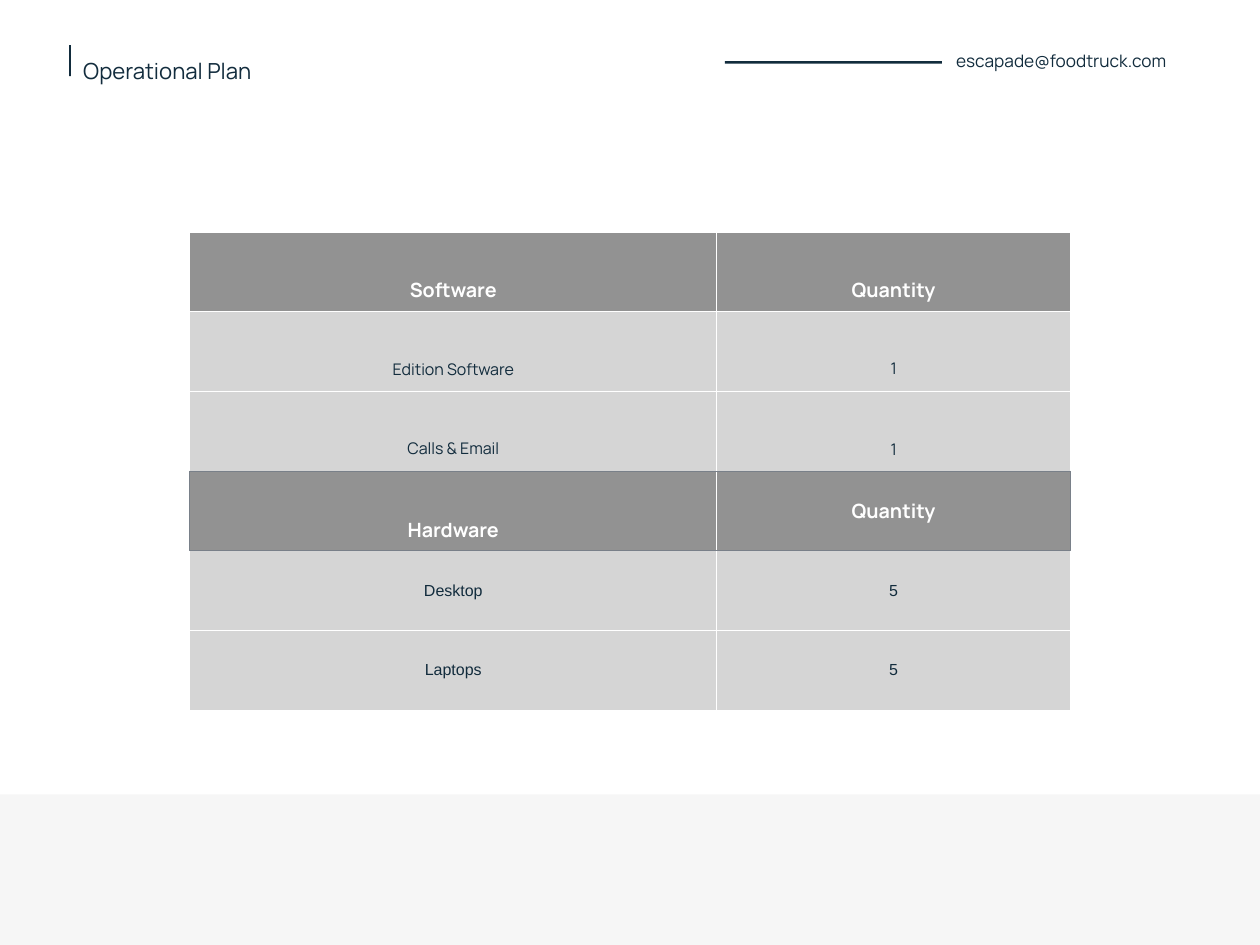
from lxml import etree
from pptx import Presentation
from pptx.dml.color import RGBColor
from pptx.enum.shapes import MSO_SHAPE
from pptx.enum.text import MSO_ANCHOR, PP_ALIGN
from pptx.oxml.ns import qn
from pptx.util import Inches, Pt

RECT = MSO_SHAPE.RECTANGLE
TOP, MIDDLE = MSO_ANCHOR.TOP, MSO_ANCHOR.MIDDLE
CENTER = PP_ALIGN.CENTER

W, H = 14.22, 10.67
FONT = "Manrope"
COLORS = {"navy": "122C3D", "white": "FFFFFF", "head": "929292",
          "body": "D5D5D5", "edge": "798089", "band": "5E5E5E"}

ROWS = [
    ("Software", "Quantity", 2.31, 2.31),
    ("Edition Software", "1", 2.62, 2.54),
    ("Calls & Email", "1", 2.54, 2.62),
    ("Hardware", "Quantity", 2.38, 1),
    ("Desktop", "5", 1, 1),
    ("Laptops", "5", 1, 1),
]
HEAD_ROWS = (0, 3)
HARDWARE = 3


def rgb(name):
    return RGBColor.from_string(COLORS[name])


def style(p, size, color, font=FONT, bold=False, spacing=1):
    p.line_spacing = spacing
    f = p.runs[0].font
    f.name, f.size, f.bold = font, Pt(size), bold
    f.color.rgb = rgb(color)


def add_bar(s, x, y, w, h, color="navy", alpha=None):
    sp = s.shapes.add_shape(RECT, Inches(x), Inches(y), Inches(w), Inches(h))
    sp.shadow.inherit = False
    sp.fill.solid()
    sp.fill.fore_color.rgb = rgb(color)
    sp.line.fill.background()
    if alpha is not None:
        clr = sp._element.spPr.find(qn("a:solidFill"))[0]
        etree.SubElement(clr, qn("a:alpha"), val=str(alpha * 1000))


def add_label(s, x, y, w, h, text, size, spacing=1):
    tf = s.shapes.add_textbox(Inches(x), Inches(y), Inches(w), Inches(h)).text_frame
    tf.word_wrap = True
    tf.vertical_anchor = TOP
    tf.margin_left = tf.margin_right = tf.margin_top = tf.margin_bottom = Inches(0.03)
    tf.text = text
    style(tf.paragraphs[0], size, "navy", spacing=spacing)


def add_title(s, x, y):
    add_bar(s, x, y + 0.04, 0.02, 0.35)
    add_label(s, x + 0.13, y, 2.53, 0.43, "Operational Plan", 18, 1.5)


def add_contact(s, x, y):
    add_bar(s, x, y + 0.15, 2.45, 0.03)
    add_label(s, x + 2.58, y, W - x - 2.58, 0.43, "escapade@foodtruck.com", 14)


def set_borders(cell, sides):
    tcPr = cell._tc.get_or_add_tcPr()
    for i, side in enumerate("LRTB"):
        ln = etree.Element(qn("a:ln" + side), w=str(Pt(0.75)))
        fill = etree.SubElement(ln, qn("a:solidFill"))
        etree.SubElement(fill, qn("a:srgbClr"), val=COLORS[sides[side]])
        tcPr.insert(i, ln)


def border_sides(row, col):
    edges = {
        "L": row == HARDWARE and col == 0,
        "R": row == HARDWARE and col == 1,
        "T": row in (HARDWARE, HARDWARE + 1),
        "B": row in (HARDWARE - 1, HARDWARE),
    }
    return {side: "edge" if on else "white" for side, on in edges.items()}


def add_equipment_table(s, x, y, col_widths, row_height):
    table = s.shapes.add_table(len(ROWS), len(col_widths), Inches(x), Inches(y),
                               Inches(sum(col_widths)),
                               Inches(row_height * len(ROWS))).table
    for col, width in zip(table.columns, col_widths):
        col.width = Inches(width)
    for r, (item, quantity, *spacings) in enumerate(ROWS):
        table.rows[r].height = Inches(row_height)
        head = r in HEAD_ROWS
        font = "Arial" if r > HARDWARE else FONT
        for c, text in enumerate((item, quantity)):
            cell = table.cell(r, c)
            cell.text = text
            cell.vertical_anchor = MIDDLE
            cell.margin_left = cell.margin_right = Inches(0.06)
            cell.margin_top = cell.margin_bottom = Inches(0.06)
            cell.fill.solid()
            cell.fill.fore_color.rgb = rgb("head" if head else "body")
            p = cell.text_frame.paragraphs[0]
            p.alignment = CENTER
            style(p, 16 if head else 13, "white" if head else "navy",
                  font, head, spacings[c])
            set_borders(cell, border_sides(r, c))


def main():
    prs = Presentation()
    prs.slide_width, prs.slide_height = Inches(W), Inches(H)
    s = prs.slides.add_slide(prs.slide_layouts[6])
    s.background.fill.solid()
    s.background.fill.fore_color.rgb = rgb("white")
    add_title(s, 0.78, 0.47)
    add_contact(s, 8.18, 0.54)
    add_bar(s, 0, 8.97, W, H - 8.97, "band", 5)
    add_equipment_table(s, 2.14, 2.62, (5.95, 3.99), 0.9)
    prs.save("out.pptx")


if __name__ == "__main__":
    main()
